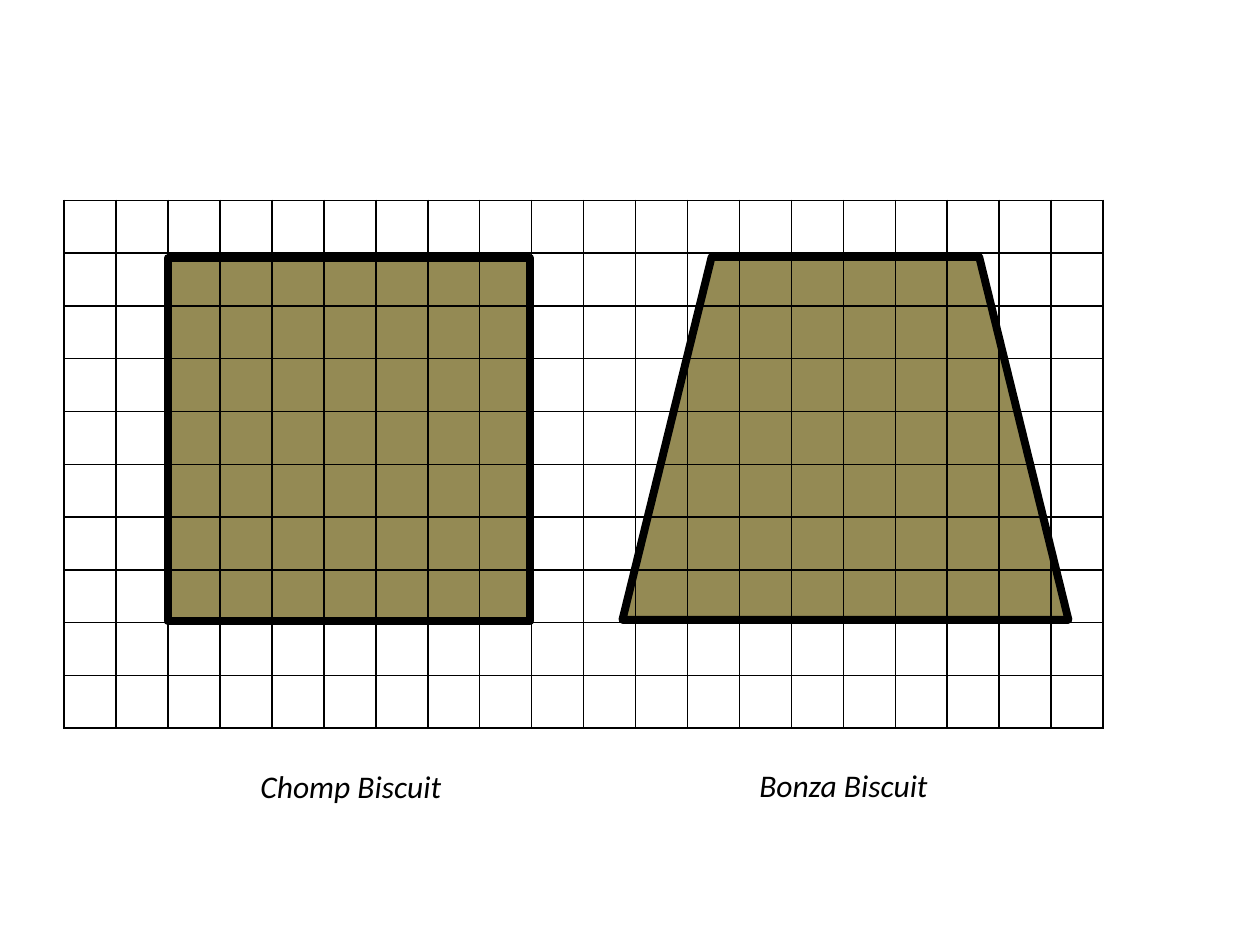
import pptx
import pptx.util
import pptx.oxml
import pptx.oxml.ns
import pptx.dml.color
import pptx.enum.shapes
import pptx.enum.text

Inches = pptx.util.Inches
Pt = pptx.util.Pt
BLACK = pptx.dml.color.RGBColor(0x00, 0x00, 0x00)
TAN = pptx.dml.color.RGBColor(0x94, 0x8A, 0x54)
KIND = pptx.enum.shapes.MSO_SHAPE
ROWS, COLS = 10, 20

deck = pptx.Presentation()
deck.slide_width, deck.slide_height = Inches(10), Inches(7.5)
slide = deck.slides.add_slide(deck.slide_layouts[6])

# Biscuits: a trapezium, wide side down, and a square
for kind, box, flip in (
    (KIND.FLOWCHART_MANUAL_OPERATION, (4.94, 2.04, 3.54, 2.88), True),
    (KIND.RECTANGLE, (1.33, 2.05, 2.88, 2.88), False),
):
    shape = slide.shapes.add_shape(kind, *map(Inches, box))
    shape.shadow.inherit = False
    shape.fill.solid()
    shape.fill.fore_color.rgb = TAN
    shape.line.color.rgb = BLACK
    shape.line.width = Pt(4.5)
    if flip:
        frame = shape.element.spPr.find(pptx.oxml.ns.qn("a:xfrm"))
        frame.set("flipV", "1")

# Square grid laid over the biscuits
grid = slide.shapes.add_table(
    ROWS, COLS, Inches(0.51), Inches(1.59), Inches(8.25), Inches(4.19)
).table
for name in ("first_row", "horz_banding"):
    setattr(grid, name, False)
for cell in grid.iter_cells():
    for name in ("margin_left", "margin_right", "margin_top", "margin_bottom"):
        setattr(cell, name, 0)
    props = cell._tc.get_or_add_tcPr()
    for side in "LRTB":
        props.append(pptx.oxml.parse_xml(
            f'<a:ln{side} {pptx.oxml.ns.nsdecls("a")} w="{Pt(1)}">'
            f'<a:solidFill><a:srgbClr val="{BLACK}"/></a:solidFill></a:ln{side}>'
        ))
    cell.fill.background()

# Names below the grid
style = {"name": "Calibri", "size": Pt(18), "italic": True}
for text, left, top in (("Chomp Biscuit", 1.2, 6.04), ("Bonza Biscuit", 5.11, 6.03)):
    label = slide.shapes.add_textbox(
        Inches(left), Inches(top), Inches(3.17), Inches(0.4)
    ).text_frame
    label.word_wrap = True
    label.auto_size = pptx.enum.text.MSO_AUTO_SIZE.SHAPE_TO_FIT_TEXT
    para = label.paragraphs[0]
    para.alignment = pptx.enum.text.PP_ALIGN.CENTER
    run = para.add_run()
    run.text = text
    for key, value in style.items():
        setattr(run.font, key, value)
    run.font.color.rgb = BLACK

deck.save("out.pptx")
